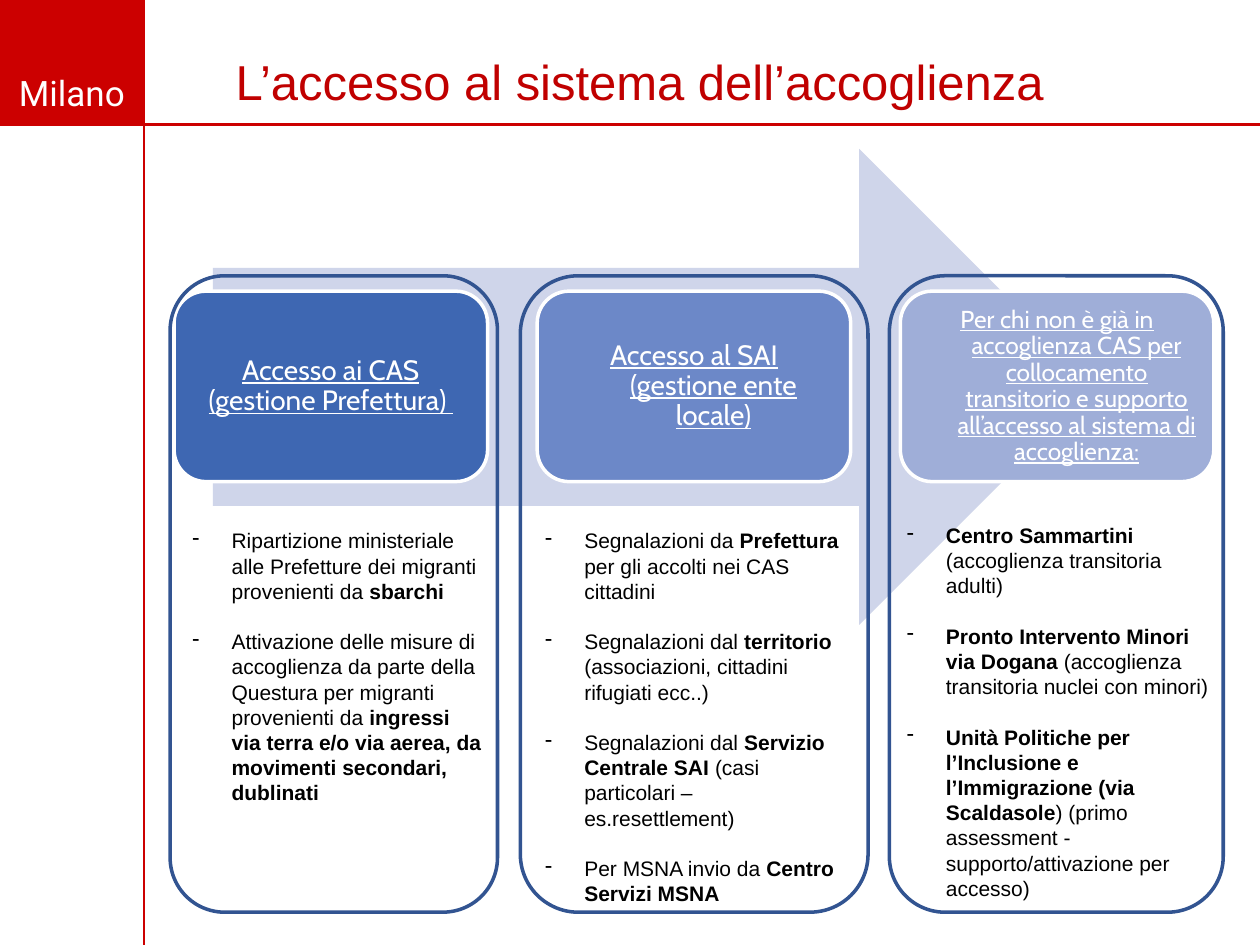
from lxml.etree import SubElement
from pptx import Presentation
from pptx.dml.color import RGBColor
from pptx.enum.shapes import MSO_CONNECTOR, MSO_SHAPE
from pptx.enum.text import MSO_ANCHOR, PP_ALIGN
from pptx.oxml.ns import qn
from pptx.util import Cm, Pt

COLORS = {"red": "CC0000", "title": "C00000", "white": "FFFFFF", "black": "000000",
          "arrow": "CFD5EA", "outline": "325491"}
CITY = "Milano"
TITLE = "L’accesso al sistema dell’accoglienza"

# Panel and body positions in cm; each bullet is a list of (text, bold) runs.
COLUMNS = [
    {"heading": "Accesso ai CAS (gestione Prefettura) ", "size": 16, "hanging": 0,
     "inset": 0.18, "fill": "3E67B2",
     "panel": (3.43, 6.6), "body": (3.63, 10.52, 6.35, 6.4),
     "bullets": [
         [("Ripartizione ministeriale alle Prefetture dei migranti provenienti da ", False),
          ("sbarchi", True)],
         [("Attivazione delle misure di accoglienza da parte della Questura per migranti "
           "provenienti da ", False),
          ("ingressi via terra e/o via aerea, da movimenti secondari, dublinati", True)],
     ]},
    {"heading": "Accesso al SAI (gestione ente locale)", "size": 16, "hanging": 0.79,
     "inset": 0.18, "fill": "6C88C8",
     "panel": (10.49, 7.01), "body": (10.74, 10.52, 6.6, 7.95),
     "bullets": [
         [("Segnalazioni da ", False), ("Prefettura", True),
          (" per gli accolti nei CAS cittadini", False)],
         [("Segnalazioni dal", False), (" territorio ", True),
          ("(associazioni, cittadini rifugiati ecc..)", False)],
         [("Segnalazioni dal ", False), ("Servizio Centrale SAI ", True),
          ("(casi particolari – es.resettlement)", False)],
         [("Per MSNA invio da ", False), ("Centro Servizi MSNA", True)],
     ]},
    {"heading": "Per chi non è già in accoglienza CAS per collocamento transitorio e supporto "
                "all’accesso al sistema di accoglienza:", "size": 14, "hanging": 0.79,
     "inset": 0.15, "fill": "9FAED8",
     "panel": (17.93, 6.73), "body": (18.03, 10.41, 6.73, 8.64),
     "bullets": [
         [("Centro Sammartini ", True), ("(accoglienza transitoria adulti)", False)],
         [("Pronto Intervento Minori via Dogana ", True),
          ("(accoglienza transitoria nuclei con minori)", False)],
         [("Unità Politiche per l’Inclusione e l’Immigrazione (via Scaldasole", True),
          (") (primo assessment - supporto/attivazione per accesso)", False)],
     ]},
]

SLIDE_WIDTH, SLIDE_HEIGHT = 25.4, 19.05
BAND_WIDTH, BAND_HEIGHT = 2.9, 2.51
CARD_LEFT, CARD_TOP, CARD_WIDTH, CARD_HEIGHT, CARD_PITCH = 3.51, 5.87, 6.32, 3.84, 7.32
PANEL_TOP, PANEL_HEIGHT = 5.56, 12.83
BULLET_INDENT = 0.79


def color(name):
    return RGBColor.from_string(COLORS.get(name, name))


def add_box(slide, kind, box, fill=None, line=None):
    shape = slide.shapes.add_shape(kind, *map(Cm, box))
    shape.shadow.inherit = False
    if fill:
        shape.fill.solid()
        shape.fill.fore_color.rgb = color(fill)
    else:
        shape.fill.background()
    if line:
        shape.line.color.rgb = color(line)
        shape.line.width = Pt(2)
    else:
        shape.line.fill.background()
    return shape


def add_rule(slide, *ends):
    connector = slide.shapes.add_connector(MSO_CONNECTOR.STRAIGHT, *map(Cm, ends))
    connector.line.color.rgb = color("red")
    connector.line.width = Pt(1.5)
    SubElement(connector._element.spPr, qn("a:effectLst"))


def add_text_frame(slide, box):
    frame = slide.shapes.add_textbox(*map(Cm, box)).text_frame
    frame.word_wrap = True
    return frame


def add_run(paragraph, text, font, size, ink, bold=False, underline=False):
    run = paragraph.add_run()
    run.text = text
    run.font.name = font
    run.font.size = Pt(size)
    run.font.color.rgb = color(ink)
    run.font.bold = bold
    run.font.underline = underline


def set_hanging(paragraph, indent, bullet=None):
    properties = paragraph._p.get_or_add_pPr()
    properties.set("marL", str(Cm(indent)))
    properties.set("indent", str(-Cm(indent)))
    if bullet:
        SubElement(properties, qn("a:buChar")).set("char", bullet)


def add_card(slide, index, column):
    box = (CARD_LEFT + index * CARD_PITCH, CARD_TOP, CARD_WIDTH, CARD_HEIGHT)
    card = add_box(slide, MSO_SHAPE.ROUNDED_RECTANGLE, box, column["fill"], "white")
    frame = card.text_frame
    frame.word_wrap = True
    frame.vertical_anchor = MSO_ANCHOR.MIDDLE
    frame.margin_left = frame.margin_right = Cm(column["inset"])
    frame.margin_top = frame.margin_bottom = Cm(column["inset"])
    paragraph = frame.paragraphs[0]
    paragraph.alignment = PP_ALIGN.CENTER
    paragraph.line_spacing = 0.9
    set_hanging(paragraph, column["hanging"])
    add_run(paragraph, column["heading"], "Cabin", column["size"], "white", underline=True)


def add_panel(slide, column):
    left, width = column["panel"]
    add_box(slide, MSO_SHAPE.ROUNDED_RECTANGLE, (left, PANEL_TOP, width, PANEL_HEIGHT),
            line="outline")
    frame = add_text_frame(slide, column["body"])
    for index, runs in enumerate(column["bullets"]):
        paragraph = frame.add_paragraph() if index else frame.paragraphs[0]
        if index:
            paragraph.space_before = Pt(14.4)
        set_hanging(paragraph, BULLET_INDENT, "-")
        for text, bold in runs:
            add_run(paragraph, text, "Arial", 12, "black", bold)


def main():
    presentation = Presentation()
    presentation.slide_width = Cm(SLIDE_WIDTH)
    presentation.slide_height = Cm(SLIDE_HEIGHT)
    slide = presentation.slides.add_slide(presentation.slide_layouts[6])

    add_box(slide, MSO_SHAPE.RECTANGLE, (0, 0, BAND_WIDTH, BAND_HEIGHT), "red")
    add_rule(slide, 0, BAND_HEIGHT, SLIDE_WIDTH, BAND_HEIGHT)
    add_rule(slide, BAND_WIDTH, SLIDE_HEIGHT, BAND_WIDTH, 0)
    city = add_text_frame(slide, (0, 1.32, BAND_WIDTH, 1.09)).paragraphs[0]
    city.alignment = PP_ALIGN.CENTER
    add_run(city, CITY, "Roboto", 20, "white")

    add_box(slide, MSO_SHAPE.RIGHT_ARROW, (4.29, 3, 17.83, 9.6), "arrow")
    for index, column in enumerate(COLUMNS):
        add_card(slide, index, column)
    for column in COLUMNS:
        add_panel(slide, column)

    title = add_text_frame(slide, (4.5, 0.91, 17.02, 1.45)).paragraphs[0]
    add_run(title, TITLE, "Arial", 28, "title")
    presentation.save("out.pptx")


if __name__ == "__main__":
    main()
